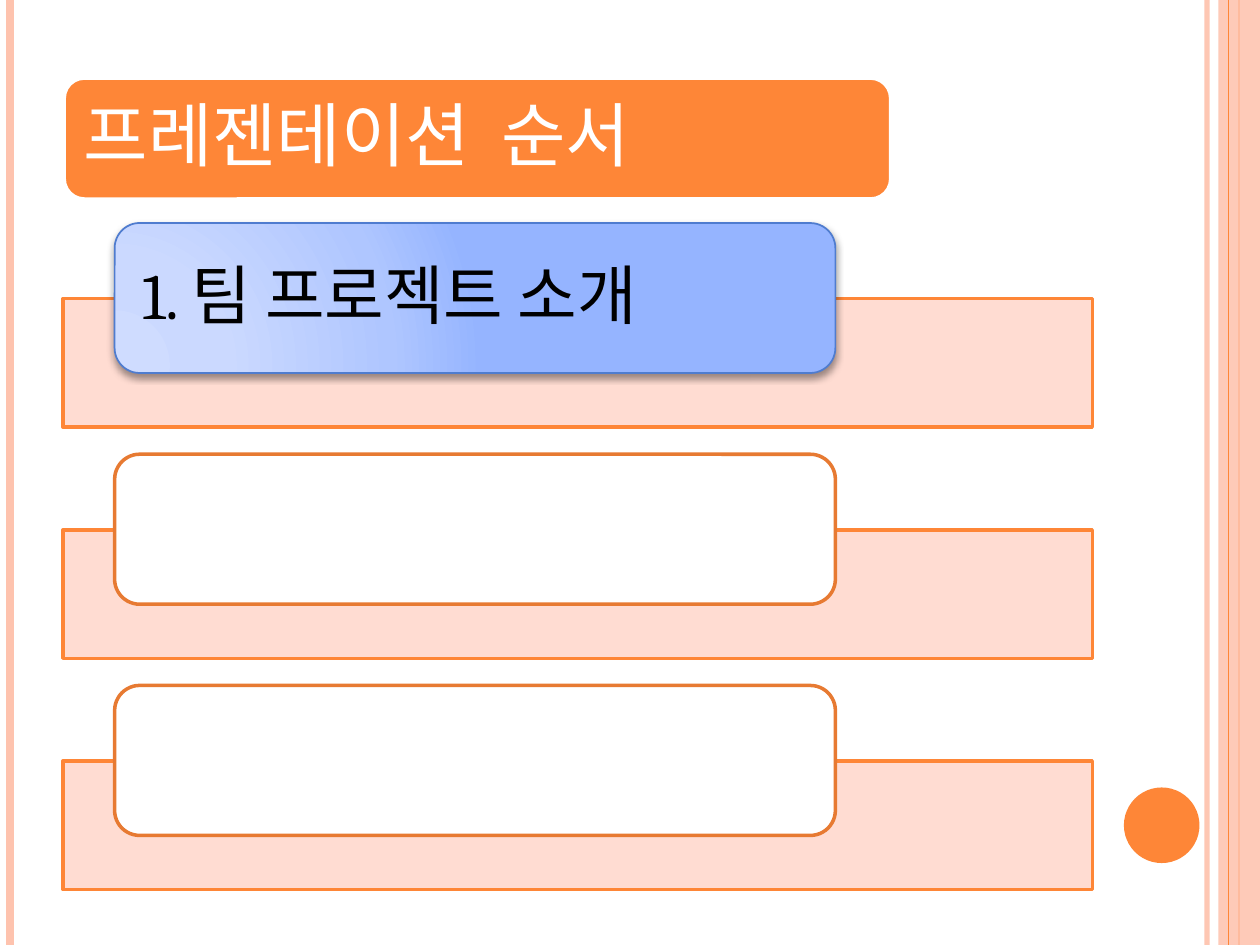
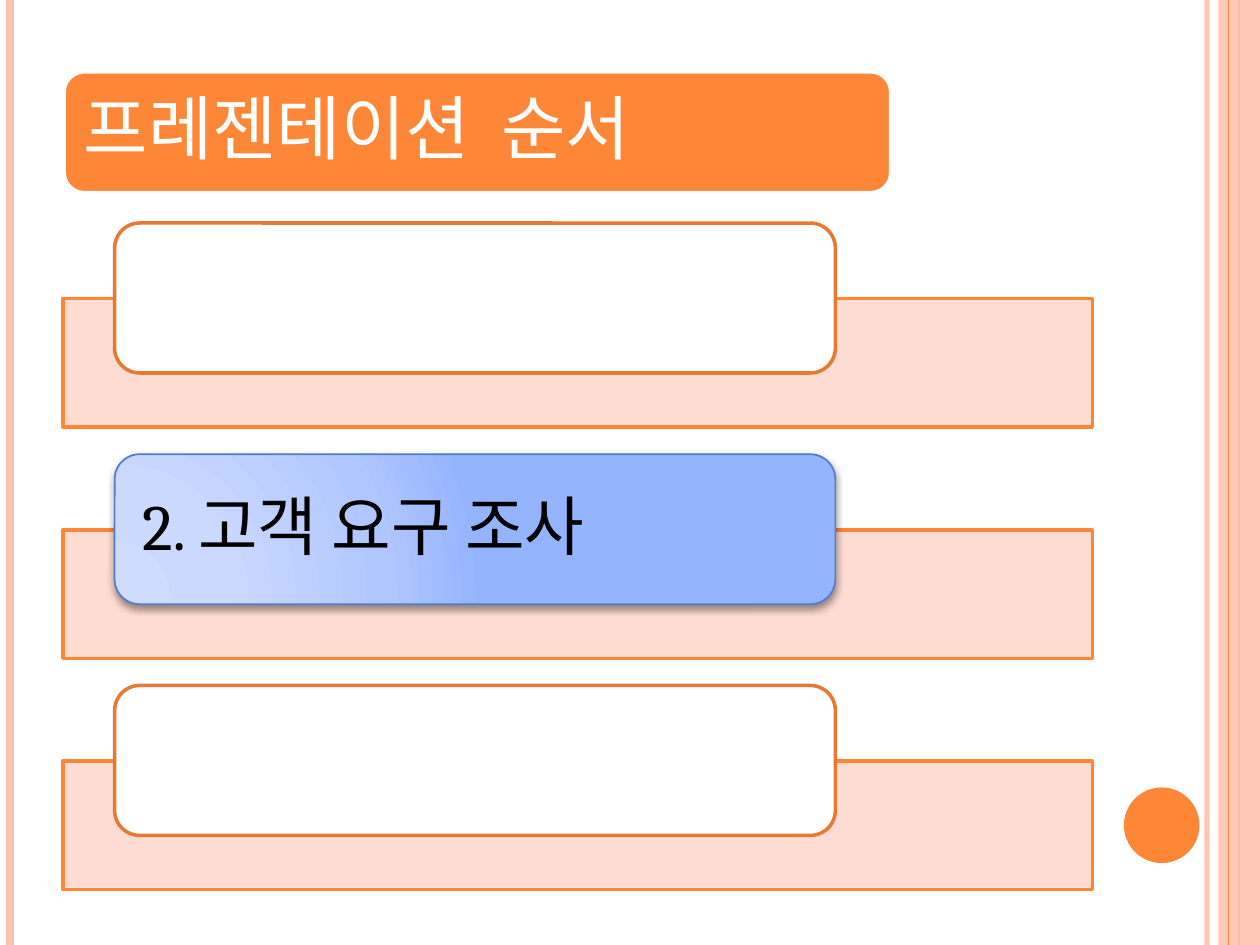
from dataclasses import dataclass
from pptx import Presentation
from pptx.dml.color import RGBColor as Rgb
from pptx.enum.shapes import MSO_CONNECTOR as Conn, MSO_SHAPE as Kind
from pptx.enum.text import MSO_ANCHOR as Anchor, PP_ALIGN as Align
from pptx.oxml import parse_xml
from pptx.oxml.ns import nsdecls, qn
from pptx.util import Inches, Pt


@dataclass(frozen=True)
class Theme:
    font: str = "Cambria"
    main: str = "FE8637"
    soft: str = "FEC3AE"
    bar: str = "FFD9CE"
    rim: str = "E77A32"
    edge: str = "4F7CCF"
    white: str = "FFFFFF"
    black: str = "000000"
    glow: tuple = ((0, "CFDCFF"), (30, "CBD9FF"), (75, "AFC6FF"), (100, "95B4FF"))
    head: int = 40
    item: int = 37


T = Theme()
WIDE, HIGH = 10, 7.5
STEP = 1.835
ROWS = 3
TITLE = ("프레젠테이션", " ", "순서")
PAGES = (
    {"active": 0, "label": "1. 팀 프로젝트 소개", "head_top": 0.62},
    {"active": 1, "label": "2. 고객 요구 조사", "head_top": 0.57},
)


def apply(target, values):
    for name, value in values.items():
        setattr(target, name, value)


def fade(fill, percent):
    node = fill._xPr.find(f"{qn('a:solidFill')}/{qn('a:srgbClr')}")
    node.append(parse_xml(f'<a:alpha {nsdecls("a")} val="{percent * 1000}"/>'))


def add_box(slide, kind, box, fill, line=None, width=2, alpha=100):
    shape = slide.shapes.add_shape(kind, *map(Inches, box))
    shape.shadow.inherit = False
    shape.fill.solid()
    shape.fill.fore_color.rgb = Rgb.from_string(fill)
    if alpha < 100:
        fade(shape.fill, alpha)
    if line:
        shape.line.color.rgb = Rgb.from_string(line)
        shape.line.width = Pt(width)
    else:
        shape.line.fill.background()
    return shape


def add_rule(slide, left, color, width, alpha=100):
    x = Inches(left)
    rule = slide.shapes.add_connector(Conn.STRAIGHT, x, 0, x, Inches(HIGH))
    rule.line.color.rgb = Rgb.from_string(color)
    rule.line.width = Pt(width)
    if alpha < 100:
        fade(rule.line.fill, alpha)
    rule._element.spPr.append(parse_xml(f'<a:effectLst {nsdecls("a")}/>'))
    return rule


def add_text(shape, parts, size, color, side, edge):
    frame = shape.text_frame
    apply(frame, {
        "word_wrap": True, "vertical_anchor": Anchor.MIDDLE,
        "margin_left": Inches(side), "margin_right": Inches(side),
        "margin_top": Inches(edge), "margin_bottom": Inches(edge),
    })
    para = frame.paragraphs[0]
    apply(para, {"alignment": Align.LEFT, "line_spacing": 0.9})
    for part in parts:
        run = para.add_run()
        run.text = part
        apply(run.font, {"name": T.font, "size": Pt(size)})
        run.font.color.rgb = Rgb.from_string(color)
        if part == " ":
            run._r.get_or_add_rPr().set("spc", "900")


def add_glow(shape):
    stops = "".join(
        f'<a:gs pos="{pos * 1000}"><a:srgbClr val="{color}"/></a:gs>'
        for pos, color in T.glow)
    props = shape._element.spPr
    props.replace(props.find(qn("a:solidFill")), parse_xml(
        f'<a:gradFill {nsdecls("a")} rotWithShape="1"><a:gsLst>{stops}</a:gsLst>'
        '<a:path path="circle"><a:fillToRect l="5000" t="100000" r="120000" '
        'b="10000"/></a:path></a:gradFill>'))
    props.find(qn("a:effectLst")).append(parse_xml(
        f'<a:outerShdw {nsdecls("a")} blurRad="{Pt(4)}" dist="{Pt(2)}" '
        f'dir="5400000" rotWithShape="0"><a:srgbClr val="{T.black}">'
        '<a:alpha val="40000"/></a:srgbClr></a:outerShdw>'))


def add_frame(slide):
    add_rule(slide, 9.58, T.soft, 3, 93)
    add_rule(slide, 0.08, T.soft, 4.5)
    mid = add_rule(slide, 9.83, T.main, 1.5)
    band = add_box(slide, Kind.RECTANGLE, (9.67, 0, WIDE - 9.67, HIGH), T.soft, alpha=87)
    mid.begin_connect(band, 0)
    mid.end_connect(band, 2)
    add_rule(slide, 9.75, T.main, 0.75)
    add_box(slide, Kind.OVAL, (8.92, 6.25, 0.6, 0.6), T.main)


def add_row(slide, row, label=None):
    shift = row * STEP
    add_box(slide, Kind.RECTANGLE, (0.5, 2.37 + shift, 8.17, 1.02), T.bar, T.main, alpha=90)
    box = (0.91, 1.77 + shift, 5.72, 1.19)
    if label:
        card = add_box(slide, Kind.ROUNDED_RECTANGLE, box, T.white, T.edge, 1)
        add_glow(card)
        add_text(card, [label], T.item, T.black, 0.16, 0)
    else:
        add_box(slide, Kind.ROUNDED_RECTANGLE, box, T.white, T.rim)


def add_head(slide, top):
    head = add_box(slide, Kind.ROUNDED_RECTANGLE, (0.51, top, 6.56, 0.96), T.main, T.white)
    add_text(head, TITLE, T.head, T.white, 0.11, 0.11)


def main():
    deck = Presentation()
    apply(deck, {"slide_width": Inches(WIDE), "slide_height": Inches(HIGH)})
    for page in PAGES:
        slide = deck.slides.add_slide(deck.slide_layouts[6])
        add_frame(slide)
        for row in range(ROWS):
            add_row(slide, row, page["label"] if row == page["active"] else None)
        add_head(slide, page["head_top"])
    deck.save("out.pptx")


if __name__ == "__main__":
    main()
